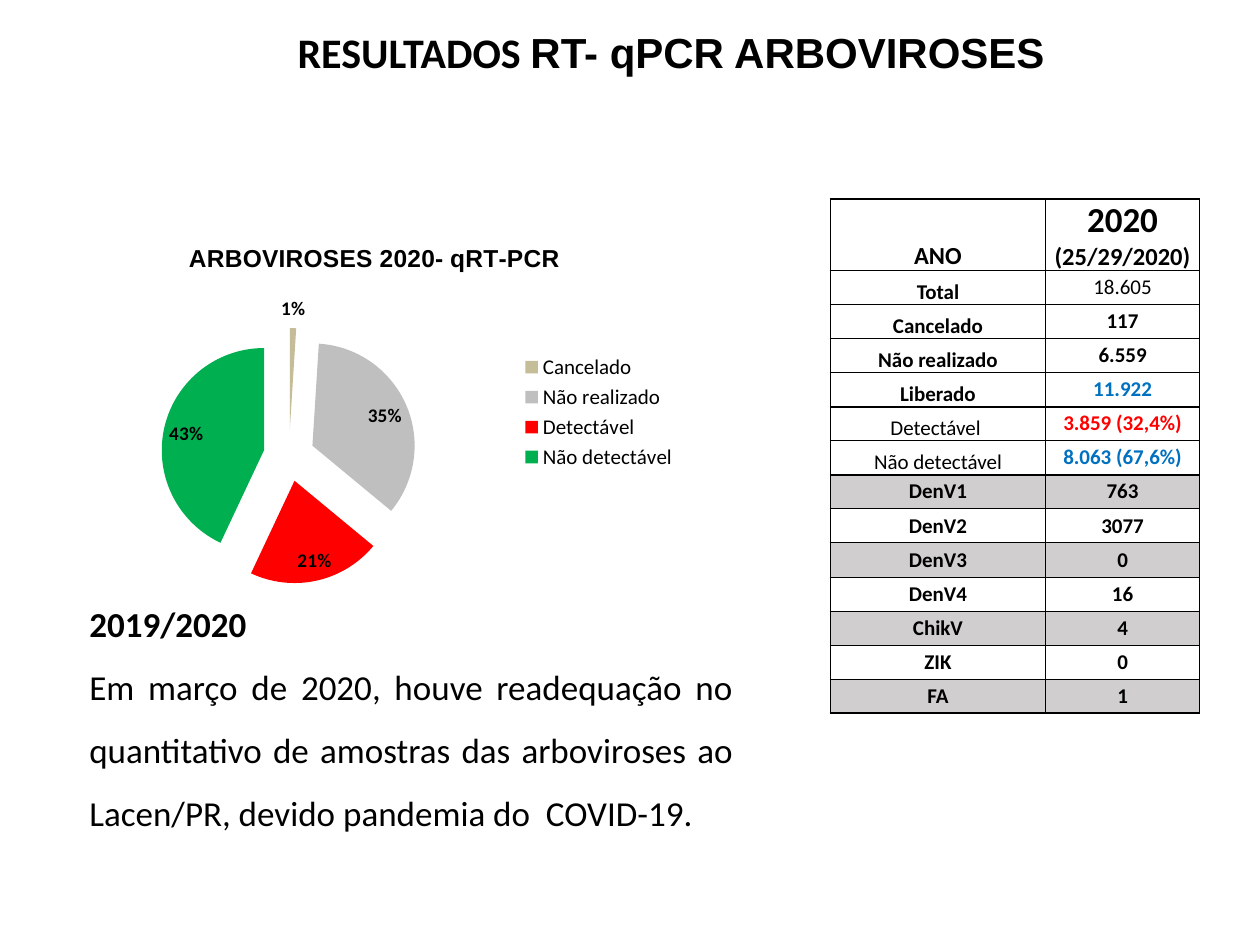
from lxml import etree
from pptx import Presentation, util as u
from pptx.chart.data import CategoryChartData
from pptx.dml.color import RGBColor
from pptx.enum import chart as ch, text
from pptx.oxml import ns

BLACK = RGBColor(0, 0, 0)
WHITE = RGBColor(255, 255, 255)
GREY = RGBColor(0xD0, 0xCE, 0xCE)
BLUE = RGBColor(0, 0x70, 0xC0)
RED = RGBColor(255, 0, 0)
TAN = RGBColor(0xC4, 0xBD, 0x97)
SILVER = RGBColor(0xBF, 0xBF, 0xBF)
GREEN = RGBColor(0, 0xB0, 0x50)

ROWS = [
    ("Total", "18.605"), ("Cancelado", "117"), ("Não realizado", "6.559"),
    ("Liberado", "11.922"), ("Detectável ", "3.859 (32,4%)"),
    ("Não detectável", "8.063 (67,6%)"), ("DenV1", "763"), ("DenV2", "3077"),
    ("DenV3", "0"), ("DenV4", "16"), ("ChikV", "4"), ("ZIK", "0"), ("FA", "1"),
]
TINTS = {(4, 1): BLUE, (5, 1): RED, (6, 1): BLUE}
PLAIN = {(1, 1), (5, 0), (6, 0)}
HEAVY = {0, 1, 5, 7, 14}
SLICES = [("Cancelado", 1, TAN), ("Não realizado", 35, SILVER),
          ("Detectável", 21, RED), ("Não detectável", 43, GREEN)]


class Deck:
    base = {"name": "Calibri", "size": 12, "bold": True}

    def __init__(self, wide, high):
        self.file = Presentation()
        self.file.slide_width, self.file.slide_height = u.Pt(wide), u.Pt(high)
        self.slide = self.file.slides.add_slide(self.file.slide_layouts[6])

    def style(self, font, color=BLACK, **form):
        for key, val in {**self.base, **form}.items():
            setattr(font, key, u.Pt(val) if key == "size" else val)
        font.color.rgb = color

    def words(self, par, runs, **form):
        for key, val in form.items():
            setattr(par, key, val)
        for word, look in runs:
            run = par.add_run()
            run.text = word
            self.style(run.font, **look)

    def box(self, place, pars):
        frame = self.slide.shapes.add_textbox(*map(u.Pt, place)).text_frame
        frame.word_wrap = True
        frame.auto_size = text.MSO_AUTO_SIZE.SHAPE_TO_FIT_TEXT
        for i, (runs, form) in enumerate(pars):
            par = frame.add_paragraph() if i else frame.paragraphs[0]
            self.words(par, runs, **form)

    def pie(self, place, title, slices):
        data = CategoryChartData()
        data.categories = [name for name, _, _ in slices]
        data.add_series("Series 1", [val for _, val, _ in slices])
        chart = self.slide.shapes.add_chart(
            ch.XL_CHART_TYPE.PIE_EXPLODED, *map(u.Pt, place), data).chart
        self.style(chart.font, name="Arial", size=10, bold=False)
        chart.has_title = chart.has_legend = True
        self.words(chart.chart_title.text_frame.paragraphs[0],
                   [(title, {"name": "Arial", "size": 14})])
        legend = chart.legend
        legend.position = ch.XL_LEGEND_POSITION.RIGHT
        legend.include_in_layout = False
        self.style(legend.font, bold=False)
        plot = chart.plots[0]
        plot.vary_by_categories = True
        plot.has_data_labels = True
        form = {"show_percentage": True, "show_value": False,
                "number_format": "0%", "number_format_is_linked": False,
                "position": ch.XL_LABEL_POSITION.BEST_FIT}
        for key, val in form.items():
            setattr(plot.data_labels, key, val)
        self.style(plot.data_labels.font, size=11)
        ser = plot.series[0]
        for old in ser._element.findall(ns.qn("c:explosion")):
            ser._element.remove(old)
        burst = etree.Element(ns.qn("c:explosion"), val="25")
        ser._element.find(ns.qn("c:tx")).addnext(burst)
        for i, (_, _, color) in enumerate(slices):
            fill = ser.points[i].format.fill
            fill.solid()
            fill.fore_color.rgb = color

    def edge(self, cell, widths):
        props = cell._tc.get_or_add_tcPr()
        for i, (side, width) in enumerate(zip("LRTB", widths)):
            line = etree.Element(ns.qn("a:ln" + side), w=str(u.Pt(width)))
            fill = etree.SubElement(line, ns.qn("a:solidFill"))
            etree.SubElement(fill, ns.qn("a:srgbClr"), val=str(BLACK))
            props.insert(i, line)

    def cell(self, cell, runs, anchor, fill=None):
        form = {"margin_left": 0, "margin_right": 0, "margin_top": 0,
                "margin_bottom": 0, "vertical_anchor": anchor}
        for key, val in form.items():
            setattr(cell, key, val)
        if fill is None:
            cell.fill.background()
        else:
            cell.fill.solid()
            cell.fill.fore_color.rgb = fill
        self.words(cell.text_frame.paragraphs[0], runs,
                   alignment=text.PP_ALIGN.CENTER)

    def table(self, place, cols, highs, head, rows):
        grid = self.slide.shapes.add_table(
            len(rows) + 1, len(cols), *map(u.Pt, place)).table
        grid.first_row = grid.horz_banding = False
        for col, width in zip(grid.columns, cols):
            col.width = u.Pt(width)
        for row, high in zip(grid.rows, highs):
            row.height = u.Pt(high)
        body = [[[(word, {"color": TINTS.get((r, c), BLACK),
                          "bold": (r, c) not in PLAIN})]
                 for c, word in enumerate(row)]
                for r, row in enumerate(rows, 1)]
        for r, row in enumerate([head] + body):
            fill = None if r < 5 else GREY if r > 6 and r % 2 else WHITE
            for c, runs in enumerate(row):
                low = r == 0 or (c == 0 and r < 7)
                anchor = text.MSO_ANCHOR.BOTTOM if low else text.MSO_ANCHOR.MIDDLE
                cell = grid.cell(r, c)
                self.cell(cell, runs, anchor, fill)
                heavy = (c == 0, c == len(cols) - 1, r in HEAVY, r + 1 in HEAVY)
                self.edge(cell, [1 if h else 0.5 for h in heavy])


def main():
    deck = Deck(720, 540)
    deck.pie((34, 127.5, 360, 216), "ARBOVIROSES 2020- qRT-PCR", SLICES)
    deck.box((119, 11.5, 529, 36), [
        ([("RESULTADOS ", {"size": 24}),
          ("RT- qPCR ARBOVIROSES", {"size": 24, "name": "Arial"})],
         {"alignment": text.PP_ALIGN.CENTER})])
    deck.box((44, 340.5, 382, 140.5), [
        ([("2019/2020", {"size": 20})], {}),
        ([("Em março de 2020, houve readequação no quantitativo de amostras "
           "das arboviroses ao Lacen/PR, devido pandemia do  COVID-19.",
           {"size": 20, "bold": False})],
         {"alignment": text.PP_ALIGN.JUSTIFY, "line_spacing": 1.5})])
    head = [[("ANO", {"size": 14})],
            [("2020 ", {"size": 20}), ("(25/29/2020)", {"size": 14})]]
    deck.table((474.5, 113.8, 211, 294.5), (123, 88),
               [26] + [19.45] * len(ROWS), head, ROWS)
    deck.file.save("out.pptx")


if __name__ == "__main__":
    main()
